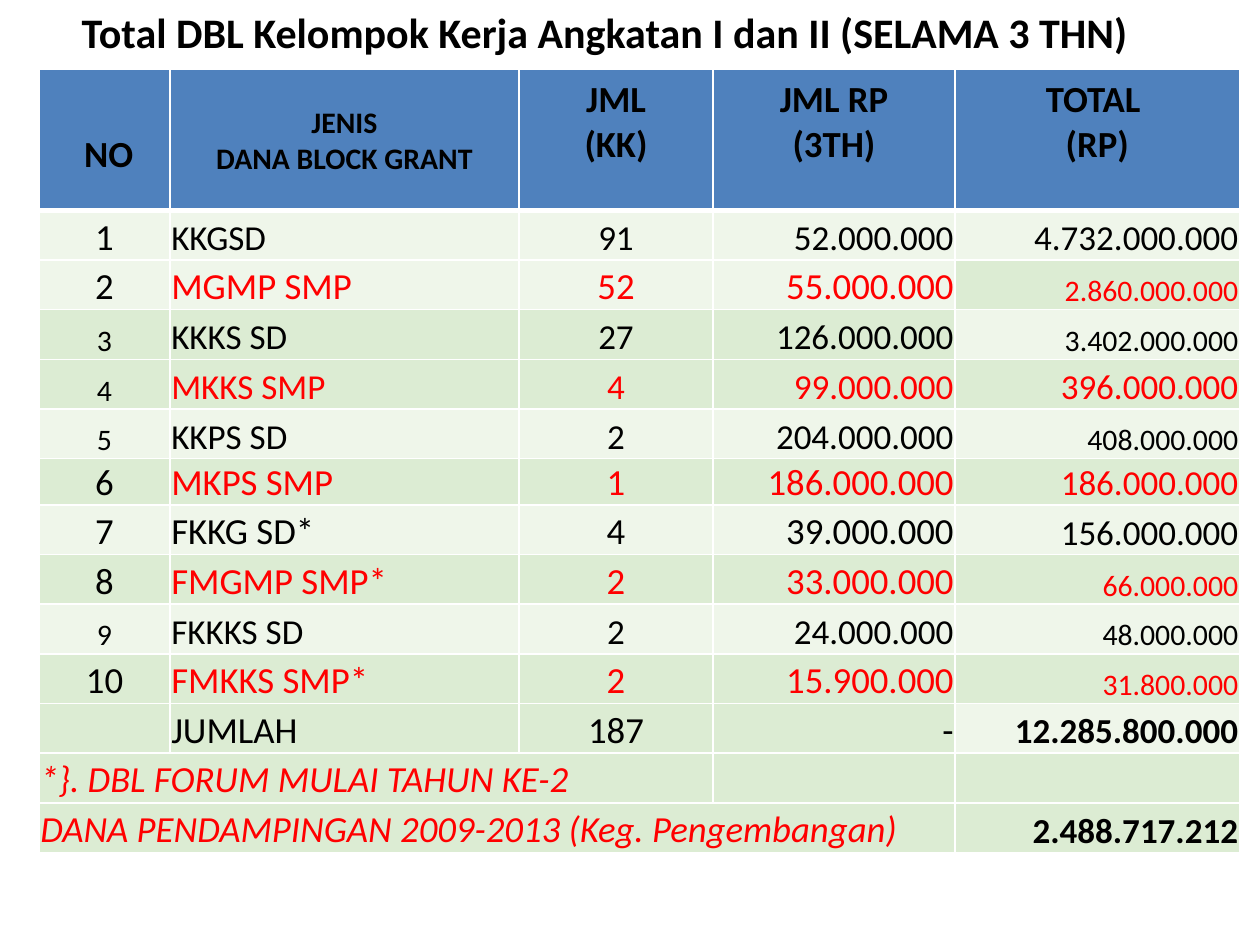
import pptx
import pptx.util
import pptx.dml.color
import pptx.enum.text
import pptx.oxml
import pptx.oxml.ns

Inches, Pt = pptx.util.Inches, pptx.util.Pt
ALIGN = pptx.enum.text.PP_ALIGN
BLUE, LIGHT, DARK = "4F81BD", "EFF6EA", "DCECD3"
BLACK, RED, WHITE = "000000", "FF0000", "FFFFFF"

TITLE = "Total DBL Kelompok Kerja Angkatan I dan II (SELAMA 3 THN)"
HEADERS = [
    (" NO", 21, 0.26),
    (" JENIS \nDANA BLOCK GRANT", 17, 0.26),
    ("JML\n(KK)", 21, 0.34),
    ("JML RP\n(3TH)", 21, 0.34),
    ("TOTAL \n(RP)", 21, 0.34),
]
# values, sizes (number, middle columns, total), fills (row, total)
ROWS = [
    (("1", "KKGSD", "91", "52.000.000", "4.732.000.000"), (21, 20, 20), (LIGHT, LIGHT)),
    (("2", "MGMP SMP", "52", "55.000.000", "2.860.000.000"), (21, 21, 17), (LIGHT, DARK)),
    (("3", "KKKS SD", "27", "126.000.000", "3.402.000.000"), (17, 20, 17), (DARK, LIGHT)),
    (("4", "MKKS SMP", "4", "99.000.000", "396.000.000"), (17, 20, 20), (DARK, DARK)),
    (("5", "KKPS SD", "2", "204.000.000", "408.000.000"), (17, 20, 17), (LIGHT, LIGHT)),
    (("6", "MKPS SMP", "1", "186.000.000", "186.000.000"), (21, 21, 20), (DARK, DARK)),
    (("7", "FKKG SD*", "4", "39.000.000", "156.000.000"), (21, 21, 20), (LIGHT, LIGHT)),
    (("8", "FMGMP SMP*", "2", "33.000.000", "66.000.000"), (21, 21, 17), (DARK, DARK)),
    (("9", "FKKKS SD", "2", "24.000.000", "48.000.000"), (17, 20, 17), (LIGHT, LIGHT)),
    (("10", "FMKKS SMP*", "2", "15.900.000", "31.800.000"), (21, 21, 17), (DARK, DARK)),
    (("", "JUMLAH", "187", "-", "12.285.800.000"), (21, 21, 20), (DARK, LIGHT)),
]
NOTES = [
    ("*}. DBL FORUM MULAI TAHUN KE-2", 3, ""),
    ("DANA PENDAMPINGAN 2009-2013 (Keg. Pengembangan)", 4, "2.488.717.212"),
]
COLS = [1.04, 2.77, 1.54, 1.92, 2.26]
ALIGNS = [ALIGN.CENTER, ALIGN.LEFT, ALIGN.CENTER, ALIGN.RIGHT, ALIGN.RIGHT]
LAST = len(COLS) - 1
TABLE_HEIGHT, HEADER_HEIGHT, SHORT_HEIGHT, SHORT_ROW = 6.21, 1.12, 0.36, 6


def color(value):
    return pptx.dml.color.RGBColor.from_string(value)


def style(p, size, shade=BLACK, bold=False, italic=False):
    p.font.name = "Calibri"
    p.font.size = Pt(size)
    p.font.bold = bold
    p.font.italic = italic
    p.font.color.rgb = color(shade)


def add_borders(cell, top, bottom):
    tcPr = cell._tc.get_or_add_tcPr()
    widths = [("lnL", 1), ("lnR", 1), ("lnT", top), ("lnB", bottom)]
    for i, (tag, width) in enumerate(widths):
        tcPr.insert(i, pptx.oxml.parse_xml(
            f'<a:{tag} {pptx.oxml.ns.nsdecls("a")} w="{Pt(width)}">'
            f'<a:solidFill><a:srgbClr val="{WHITE}"/></a:solidFill></a:{tag}>'))


def fill_cell(cell, text, size, align, fill, shade=BLACK, bold=False, italic=False, bottom=0):
    cell.margin_left = cell.margin_right = cell.margin_top = Inches(0.01)
    cell.margin_bottom = Inches(bottom)
    cell.vertical_anchor = pptx.enum.text.MSO_ANCHOR.BOTTOM
    cell.fill.solid()
    cell.fill.fore_color.rgb = color(fill)
    cell.text = text
    for p in cell.text_frame.paragraphs:
        p.alignment = align
        style(p, size, shade, bold, italic)


def main():
    prs = pptx.Presentation()
    prs.slide_width, prs.slide_height = Inches(10), Inches(7.5)
    s = prs.slides.add_slide(prs.slide_layouts[6])

    count = 1 + len(ROWS) + len(NOTES)
    tbl = s.shapes.add_table(count, len(COLS), Inches(0.31), Inches(0.55),
                             Inches(sum(COLS)), Inches(TABLE_HEIGHT)).table
    tbl.first_row = tbl.horz_banding = False
    for col, width in zip(tbl.columns, COLS):
        col.width = Inches(width)
    row_height = (TABLE_HEIGHT - HEADER_HEIGHT - SHORT_HEIGHT) / (count - 2)
    special = {0: HEADER_HEIGHT, SHORT_ROW: SHORT_HEIGHT}
    for i, row in enumerate(tbl.rows):
        row.height = Inches(special.get(i, row_height))

    for c, (text, size, bottom) in enumerate(HEADERS):
        fill_cell(tbl.cell(0, c), text, size, ALIGN.CENTER, BLUE, bold=True, bottom=bottom)

    for r, (values, sizes, fills) in enumerate(ROWS, 1):
        for c, text in enumerate(values):
            size = sizes[0] if c == 0 else sizes[2] if c == LAST else sizes[1]
            shade = RED if c > 0 and "SMP" in values[1] else BLACK
            fill_cell(tbl.cell(r, c), text, size, ALIGNS[c], fills[c == LAST], shade,
                      bold=r == len(ROWS) and c == LAST)

    for r, (note, span, total) in enumerate(NOTES, 1 + len(ROWS)):
        for c in range(len(COLS)):
            fill_cell(tbl.cell(r, c), "", 20, ALIGNS[c], DARK)
        fill_cell(tbl.cell(r, 0), note, 21, ALIGN.LEFT, DARK, RED, italic=True)
        fill_cell(tbl.cell(r, LAST), total, 20, ALIGN.RIGHT, DARK, bold=True)
        tbl.cell(r, 0).merge(tbl.cell(r, span - 1))

    for r in range(count):
        for c in range(len(COLS)):
            add_borders(tbl.cell(r, c), 3 if r == 1 else 1, 3 if r == 0 else 1)

    tf = s.shapes.add_textbox(Inches(0.55), 0, Inches(8.79), Inches(0.5)).text_frame
    tf.word_wrap = True
    tf.text = TITLE
    style(tf.paragraphs[0], 24, bold=True)

    prs.save("out.pptx")


if __name__ == "__main__":
    main()
